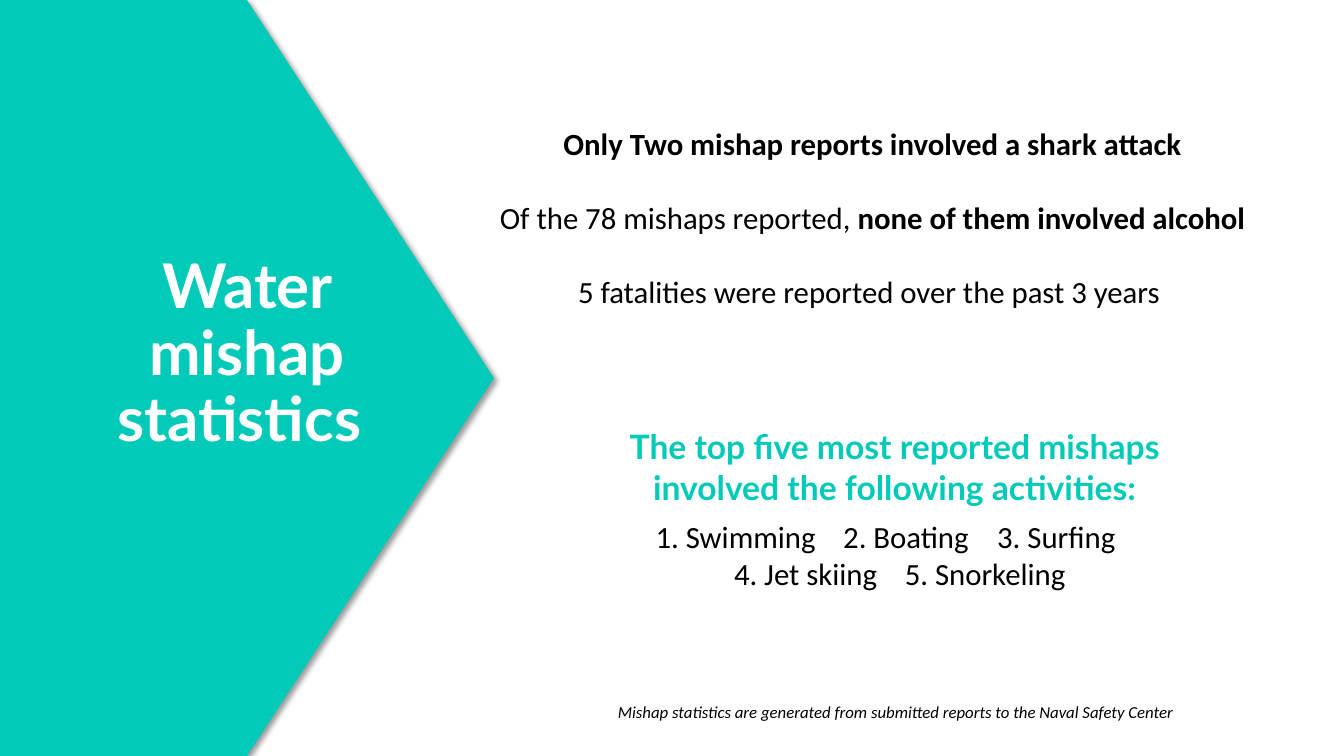
from dataclasses import dataclass

from lxml import etree
from pptx import Presentation
from pptx.dml.color import RGBColor
from pptx.enum import shapes, text
from pptx.oxml import ns
from pptx.util import Pt

TEAL = RGBColor(0x01, 0xCA, 0xB8)
WHITE = RGBColor(0xFF, 0xFF, 0xFF)
BLACK = RGBColor(0x00, 0x00, 0x00)
CENTER, LEFT = text.PP_ALIGN.CENTER, text.PP_ALIGN.LEFT


@dataclass(frozen=True)
class Run:
    text: str
    bold: bool = False
    italic: bool = False


@dataclass(frozen=True)
class Para:
    runs: tuple[Run, ...]
    align: int = CENTER
    spacing: float = 1.0
    tabs: tuple[float, ...] = ()


@dataclass(frozen=True)
class Block:
    box: tuple[float, float, float, float]
    paras: tuple[Para, ...]
    size: float
    font: str = "Calibri"
    color: RGBColor = BLACK
    fill: RGBColor | None = None


TITLE = Block((62.6, 173.5, 227.5, 160.6),
              (Para((Run("Water mishap statistics ", bold=True),), spacing=0.9),),
              44, "Lato", WHITE)

BLOCKS = (
    Block((409, 301, 460, 65.5),
          (Para((Run("The top five most reported mishaps involved the following activities:",
                     bold=True),)),),
          24, "Lato", TEAL, WHITE),
    Block((434.2, 366.5, 409.7, 60.5),
          (Para((Run("\t1. Swimming\t2. Boating\t3. Surfing"),), LEFT, tabs=(27, 161, 271)),
           Para((Run("\t4. Jet skiing\t5. Snorkeling"),), LEFT, tabs=(83, 205))),
          22),
    Block((286.6, 59, 673.2, 196.6),
          (Para((Run("Only Two mishap reports involved a shark attack", bold=True),), spacing=2),
           Para((Run("Of the 78 mishaps reported, "),
                 Run("none of them involved alcohol", bold=True)), spacing=2),
           Para((Run("5 fatalities were reported over the past 3 years "),), spacing=2)),
          22),
    Block((434.2, 497.5, 423.4, 21.6),
          (Para((Run("Mishap statistics are generated from submitted reports "
                     "to the Naval Safety Center", italic=True),), LEFT),),
          12),
)


def add_tabs(p, stops: tuple[float, ...]) -> None:
    tab_list = etree.SubElement(p._p.get_or_add_pPr(), ns.qn("a:tabLst"))
    for stop in stops:
        etree.SubElement(tab_list, ns.qn("a:tab"), pos=str(Pt(stop)), algn="l")


def add_shadow(sp) -> None:
    sp.shadow.inherit = False
    effects = sp._element.spPr.find(ns.qn("a:effectLst"))
    shadow = etree.SubElement(effects, ns.qn("a:outerShdw"), blurRad=str(Pt(4)),
                              dist=str(Pt(3)), dir=str(45 * 60000),
                              algn="tl", rotWithShape="0")
    color = etree.SubElement(shadow, ns.qn("a:srgbClr"), val=str(BLACK))
    etree.SubElement(color, ns.qn("a:alpha"), val="40000")


def write(sp, block: Block, anchor=text.MSO_ANCHOR.TOP) -> None:
    tf = sp.text_frame
    tf.word_wrap = True
    tf.auto_size = text.MSO_AUTO_SIZE.NONE
    tf.vertical_anchor = anchor
    for i, para in enumerate(block.paras):
        p = tf.add_paragraph() if i else tf.paragraphs[0]
        p.alignment = para.align
        p.line_spacing = para.spacing
        p.space_before = Pt(0)
        if para.tabs:
            add_tabs(p, para.tabs)
        for run in para.runs:
            r = p.add_run()
            r.text = run.text
            r.font.name = block.font
            r.font.size = Pt(block.size)
            r.font.bold = run.bold
            r.font.italic = run.italic
            r.font.color.rgb = block.color


def main() -> None:
    prs = Presentation()
    prs.slide_width, prs.slide_height = Pt(960), Pt(540)
    s = prs.slides.add_slide(prs.slide_layouts[5])

    arrow = s.shapes.add_shape(shapes.MSO_SHAPE.PENTAGON, 0, 0, Pt(352.8), Pt(540))
    arrow.fill.solid()
    arrow.fill.fore_color.rgb = TEAL
    arrow.line.fill.background()
    add_shadow(arrow)

    title = s.shapes.title
    arrow._element.addnext(title._element)
    title.left, title.top, title.width, title.height = map(Pt, TITLE.box)
    write(title, TITLE, text.MSO_ANCHOR.MIDDLE)

    for block in BLOCKS:
        sp = s.shapes.add_textbox(*map(Pt, block.box))
        if block.fill is not None:
            sp.fill.solid()
            sp.fill.fore_color.rgb = block.fill
        write(sp, block)

    prs.save("out.pptx")


if __name__ == "__main__":
    main()
